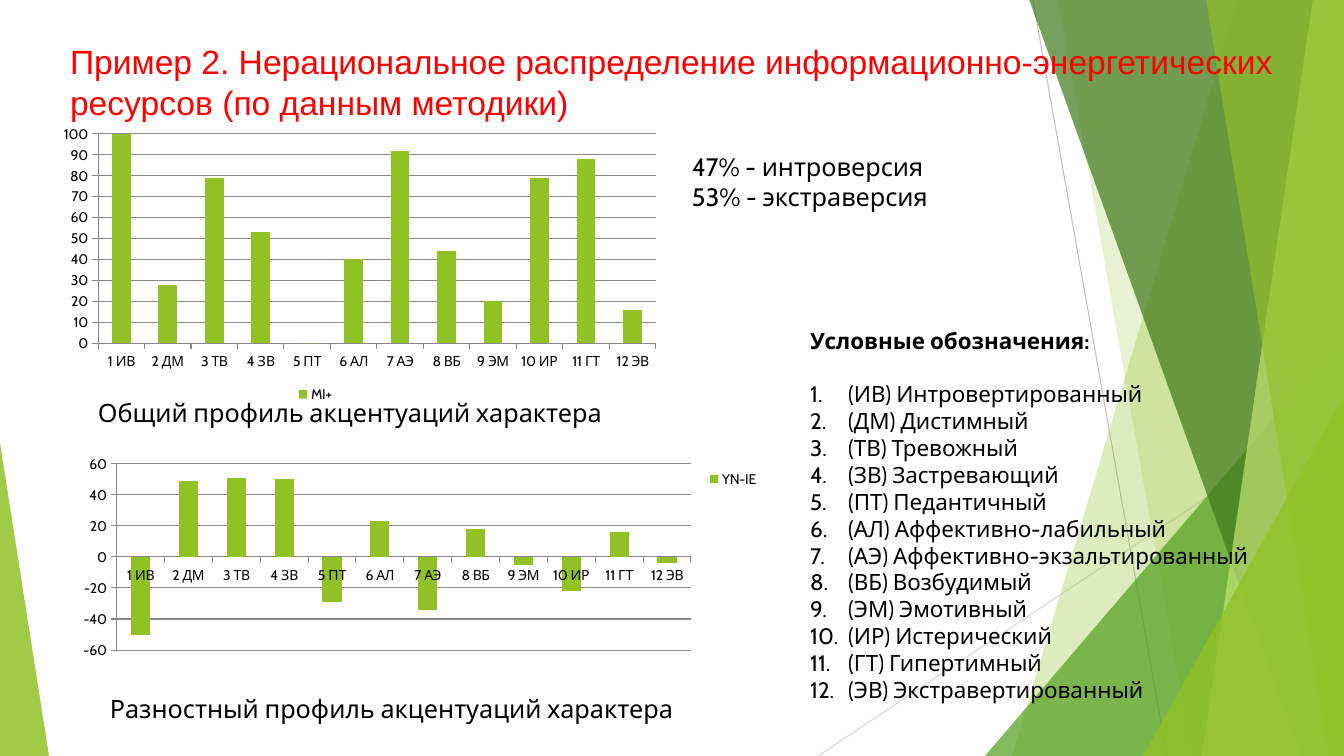
import pptx
import pptx.chart.data
import pptx.dml.color
import pptx.enum.chart
import pptx.enum.shapes
import pptx.enum.text
import pptx.oxml
import pptx.oxml.ns
import pptx.util
from lxml import etree

qn = pptx.oxml.ns.qn
SCALE = 914400 / 100.8
WIDE, HIGH = 1344, 756
HUES = {
    "lime": "90C226", "leaf": "54A021", "moss": "3F7819", "pale": "C0E474",
    "red": "FF0000", "black": "000000", "grid": "878787",
    "ash": "BFBFBF", "mist": "D9D9D9",
}
TYPES = [
    "(ИВ) Интровертированный", "(ДМ) Дистимный", "(ТВ) Тревожный",
    "(ЗВ) Застревающий", "(ПТ) Педантичный", "(АЛ) Аффективно-лабильный",
    "(АЭ) Аффективно-экзальтированный", "(ВБ) Возбудимый",
    "(ЭМ) Эмотивный", "(ИР) Истерический", "(ГТ) Гипертимный",
    "(ЭВ) Экстравертированный",
]
CODES = [f"{num} {name[1:3]}" for num, name in enumerate(TYPES, 1)]


def px(size):
    """Turn px into EMU."""
    return round(size * SCALE)


def hue(name):
    """Give the named colour."""
    return pptx.dml.color.RGBColor.from_string(HUES[name])


def style(item, **form):
    """Set each format value on the item."""
    for key, val in form.items():
        setattr(item, key, val)


class Slide:
    """Hold the style and the current slide."""

    def __init__(self, deck):
        """Add a slide with title and body."""
        self.page = deck.slides.add_slide(deck.slide_layouts[1])
        self.shapes = self.page.shapes
        self.face = "Cabin"

    def font(self, item, size, tint="black", **form):
        """Format a font."""
        style(item, **{"name": self.face, "size": pptx.util.Pt(size), **form})
        item.color.rgb = hue(tint)

    def line(self, start, end, tint):
        """Draw a thin straight line."""
        kind = pptx.enum.shapes.MSO_CONNECTOR.STRAIGHT
        rule = self.shapes.add_connector(kind, *map(px, start + end))
        rule.line.color.rgb = hue(tint)
        rule.line.width = pptx.util.Pt(0.75)
        etree.SubElement(rule.element.spPr, qn("a:effectLst"))

    def paint(self, shape, tint, alpha):
        """Fill a shape with a see-through colour."""
        shape.shadow.inherit = False
        shape.line.fill.background()
        shape.fill.solid()
        shape.fill.fore_color.rgb = hue(tint)
        mark = shape.element.find(".//" + qn("a:srgbClr"))
        etree.SubElement(mark, qn("a:alpha"), val=str(alpha * 1000))

    def band(self, top, base, tint, alpha):
        """Draw a slanted band up to the right edge."""
        pen = self.shapes.build_freeform(top, -1, scale=SCALE)
        pen.add_line_segments([(WIDE, -1), (WIDE, HIGH), (base, HIGH)])
        self.paint(pen.convert_to_shape(), tint, alpha)

    def wedge(self, box, peak, tint, alpha):
        """Draw a triangle with its peak at a share of the width."""
        kind = pptx.enum.shapes.MSO_SHAPE.ISOSCELES_TRIANGLE
        shape = self.shapes.add_shape(kind, *map(px, box))
        shape.adjustments[0] = peak
        self.paint(shape, tint, alpha)

    def place(self, holder, box):
        """Move a placeholder to the front and into its box."""
        holder.element.getparent().append(holder.element)
        style(holder, **dict(zip(("left", "top", "width", "height"), map(px, box))))
        style(holder.text_frame, word_wrap=True,
              auto_size=pptx.enum.text.MSO_AUTO_SIZE.NONE)
        return holder.text_frame

    def title(self, text, box):
        """Write the title."""
        frame = self.place(self.shapes.title, box)
        frame.vertical_anchor = pptx.enum.text.MSO_ANCHOR.BOTTOM
        frame.text = text
        par = frame.paragraphs[0]
        par.alignment = pptx.enum.text.PP_ALIGN.LEFT
        self.font(par.font, 24, "red", name="Arial")

    def list(self, head, items, box):
        """Write a bold heading and a numbered list."""
        frame = self.place(self.page.placeholders[1], box)
        frame.text = "\n".join([head, *items])
        for row, par in enumerate(frame.paragraphs):
            props = par._p.get_or_add_pPr()
            props.set("marL", str(px(38 if row else 0)))
            props.set("indent", str(px(-38 if row else 0)))
            par.space_before = pptx.util.Pt(19 if row == 1 else 0)
            if row:
                etree.SubElement(props, qn("a:buFont"), typeface="+mj-lt")
                etree.SubElement(props, qn("a:buAutoNum"), type="arabicPeriod")
            else:
                etree.SubElement(props, qn("a:buNone"))
            self.font(par.font, 16, bold=not row)

    def text(self, words, box):
        """Add a text box."""
        frame = self.shapes.add_textbox(*map(px, box)).text_frame
        frame.word_wrap = True
        frame.text = words
        for par in frame.paragraphs:
            self.font(par.font, 18)

    def fix(self, node, spot, **place):
        """Give a chart part a fixed layout."""
        for old in node.findall(qn("c:layout")):
            node.remove(old)
        outer = etree.Element(qn("c:layout"))
        inner = etree.SubElement(outer, qn("c:manualLayout"))
        for key, val in place.items():
            etree.SubElement(inner, qn("c:" + key), val=str(val))
        node.insert(spot, outer)

    def chart(self, name, vals, box, plot, key, **span):
        """Add a column chart with a fixed plot and legend."""
        data = pptx.chart.data.CategoryChartData(number_format="0")
        data.categories = CODES
        data.add_series(name, vals)
        kind = pptx.enum.chart.XL_CHART_TYPE.COLUMN_CLUSTERED
        chart = self.shapes.add_chart(kind, *map(px, box), data).chart
        style(chart, has_title=False, has_legend=True)
        self.font(chart.font, 10)
        style(chart.plots[0], gap_width=150, vary_by_categories=False)
        bars = chart.plots[0].series[0]
        bars.invert_if_negative = False
        bars.format.fill.solid()
        bars.format.fill.fore_color.rgb = hue("lime")
        cats, axis = chart.category_axis, chart.value_axis
        style(axis, has_major_gridlines=True, **span)
        style(axis.tick_labels, number_format="0", number_format_is_linked=False)
        for part in (cats, axis):
            part.major_tick_mark = pptx.enum.chart.XL_TICK_MARK.OUTSIDE
        for part in (cats, axis, axis.major_gridlines):
            part.format.line.color.rgb = hue("grid")
            part.format.line.width = pptx.util.Pt(0.75)
        style(chart.legend, include_in_layout=False,
              position=pptx.enum.chart.XL_LEGEND_POSITION.RIGHT)
        self.font(chart.legend.font, 10)
        self.fix(chart.element.find(".//" + qn("c:plotArea")), 0,
                 layoutTarget="inner", xMode="edge", yMode="edge",
                 **dict(zip("xywh", plot)))
        self.fix(chart.element.find(".//" + qn("c:legend")), 1,
                 xMode="edge", yMode="edge", **dict(zip("xy", key)))


def main():
    """Build and save the slide."""
    deck = pptx.Presentation()
    style(deck, slide_width=px(WIDE), slide_height=px(HIGH))
    page = Slide(deck)
    page.line((1033, 0), (1167, HIGH), "ash")
    page.line((WIDE, 406), (818, HIGH), "mist")
    page.band(1238, 1012, "lime", 30)
    page.band(1058, 1192, "lime", 20)
    page.wedge((985, 336, 359, 420), 1, "leaf", 72)
    page.band(1029, 1301, "moss", 70)
    page.band(1313, 1202, "pale", 70)
    page.band(1206, 1329, "lime", 65)
    page.wedge((1143, 396, 201, 360), 1, "lime", 80)
    page.wedge((0, 443, 49, 313), 0, "lime", 85)
    page.title("Пример 2. Нерациональное распределение информационно-энергетических "
               "ресурсов (по данным методики)", (60, 24, 1256, 103))
    page.text("Общий профиль акцентуаций характера", (88, 392, 592, 40))
    page.text("Разностный профиль акцентуаций характера", (100, 688, 621, 40))
    page.text("47% - интроверсия\n53% - экстраверсия", (682, 146, 421, 72))
    page.chart("YN-IE", [-50, 49, 51, 50, -29, 23, -34, 18, -5, -22, 16, -4],
               (60, 448, 709, 266), (0.08, 0.06, 0.81, 0.7), (0.91, 0.07),
               minimum_scale=-60, maximum_scale=60, major_unit=20)
    page.chart("MI+", [100, 28, 79, 53, 0, 40, 92, 44, 20, 79, 88, 16],
               (49, 116, 613, 299), (0.08, 0.06, 0.91, 0.7), (0.4, 0.89),
               minimum_scale=0, maximum_scale=100, major_unit=10)
    page.list("Условные обозначения:", TYPES, (800, 322, 516, 420))
    deck.save("out.pptx")


if __name__ == "__main__":
    main()
